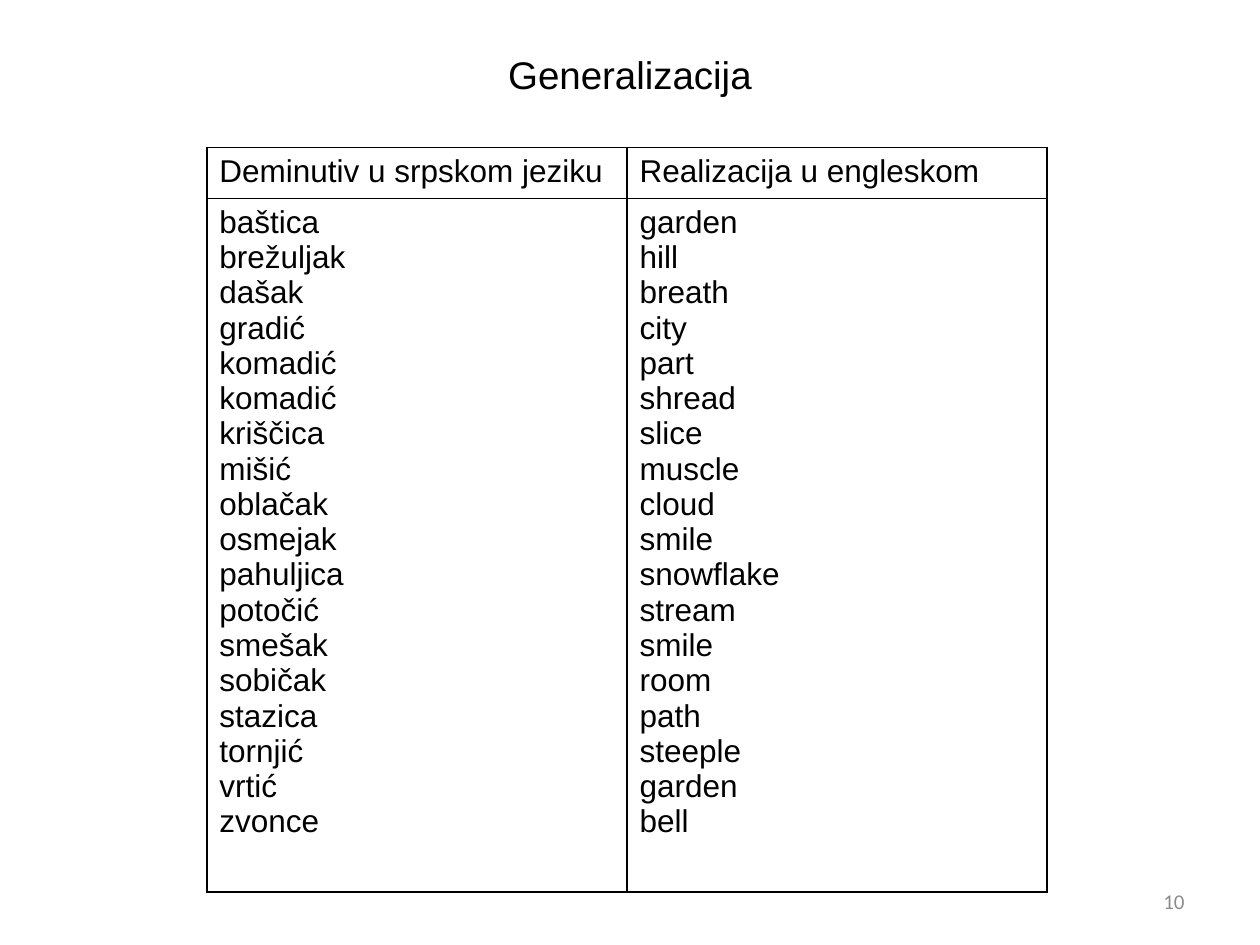
from dataclasses import dataclass

from lxml.etree import SubElement
from pptx import Presentation
from pptx.dml.color import RGBColor
from pptx.enum.text import MSO_ANCHOR, MSO_AUTO_SIZE, PP_ALIGN
from pptx.oxml import parse_xml
from pptx.oxml.ns import nsdecls, qn
from pptx.util import Cm, Pt

TITLE = "Generalizacija"
PAGE_NUMBER = "10"
HEADINGS = ("Deminutiv u srpskom jeziku", "Realizacija u engleskom")
WORD_PAIRS = [
    ("baštica", "garden"),
    ("brežuljak", "hill"),
    ("dašak", "breath"),
    ("gradić", "city"),
    ("komadić", "part"),
    ("komadić", "shread"),
    ("kriščica", "slice"),
    ("mišić", "muscle"),
    ("oblačak", "cloud"),
    ("osmejak", "smile"),
    ("pahuljica", "snowflake"),
    ("potočić", "stream"),
    ("smešak", "smile"),
    ("sobičak", "room"),
    ("stazica", "path"),
    ("tornjić", "steeple"),
    ("vrtić", "garden"),
    ("zvonce", "bell"),
]


@dataclass(frozen=True)
class Theme:
    body_font: str = "Arial"
    number_font: str = "Calibri"
    ink: str = "000000"
    muted: str = "8C8C8C"
    title_size: int = 22
    table_size: int = 18
    number_size: int = 12
    border_width: int = 1


THEME = Theme()
SLIDE_WIDTH, SLIDE_HEIGHT = Cm(25.4), Cm(19.05)
TABLE_LEFT, TABLE_TOP = Cm(4.17), Cm(2.97)
COLUMN_WIDTH = Cm(8.47)
ROW_HEIGHTS = (Cm(1.03), Cm(13.98))


def write_lines(frame, lines, size, font=THEME.body_font, color=THEME.ink, align=PP_ALIGN.LEFT):
    for index, line in enumerate(lines):
        para = frame.add_paragraph() if index else frame.paragraphs[0]
        para.alignment = align
        span = para.add_run()
        span.text = line
        span.font.name = font
        span.font.size = Pt(size)
        span.font.color.rgb = RGBColor.from_string(color)


def place(box, left, top, width, height):
    box.left, box.top, box.width, box.height = left, top, width, height
    frame = box.text_frame
    frame.word_wrap = True
    frame.auto_size = MSO_AUTO_SIZE.NONE
    frame.vertical_anchor = MSO_ANCHOR.MIDDLE
    return frame


def outline(cell):
    properties = cell._tc.get_or_add_tcPr()
    for index, side in enumerate(("lnL", "lnR", "lnT", "lnB")):
        line = parse_xml(f'<a:{side} {nsdecls("a")} w="{Pt(THEME.border_width)}"/>')
        fill = SubElement(line, qn("a:solidFill"))
        SubElement(fill, qn("a:srgbClr"), val=THEME.ink)
        properties.insert(index, line)


def add_word_table(page):
    columns = list(zip(*WORD_PAIRS))
    rows = [[[heading] for heading in HEADINGS], columns]
    table = page.shapes.add_table(
        len(rows), len(HEADINGS), TABLE_LEFT, TABLE_TOP,
        COLUMN_WIDTH * len(HEADINGS), sum(ROW_HEIGHTS),
    ).table
    table.first_row = table.horz_banding = False
    for column in table.columns:
        column.width = COLUMN_WIDTH
    for row, height, contents in zip(table.rows, ROW_HEIGHTS, rows):
        row.height = height
        for cell, lines in zip(row.cells, contents):
            cell.fill.background()
            outline(cell)
            write_lines(cell.text_frame, lines, THEME.table_size)


def main():
    deck = Presentation()
    deck.slide_width, deck.slide_height = SLIDE_WIDTH, SLIDE_HEIGHT
    page = deck.slides.add_slide(deck.slide_layouts[5])

    title_frame = place(page.shapes.title, 0, 0, SLIDE_WIDTH, TABLE_TOP)
    write_lines(title_frame, [TITLE], THEME.title_size, align=PP_ALIGN.CENTER)

    add_word_table(page)

    number_area = (Cm(18.2), Cm(17.66), Cm(5.93), Cm(1.01))
    number_frame = place(page.shapes.add_textbox(*number_area), *number_area)
    write_lines(number_frame, [PAGE_NUMBER], THEME.number_size,
                THEME.number_font, THEME.muted, PP_ALIGN.RIGHT)

    deck.save("out.pptx")


if __name__ == "__main__":
    main()
